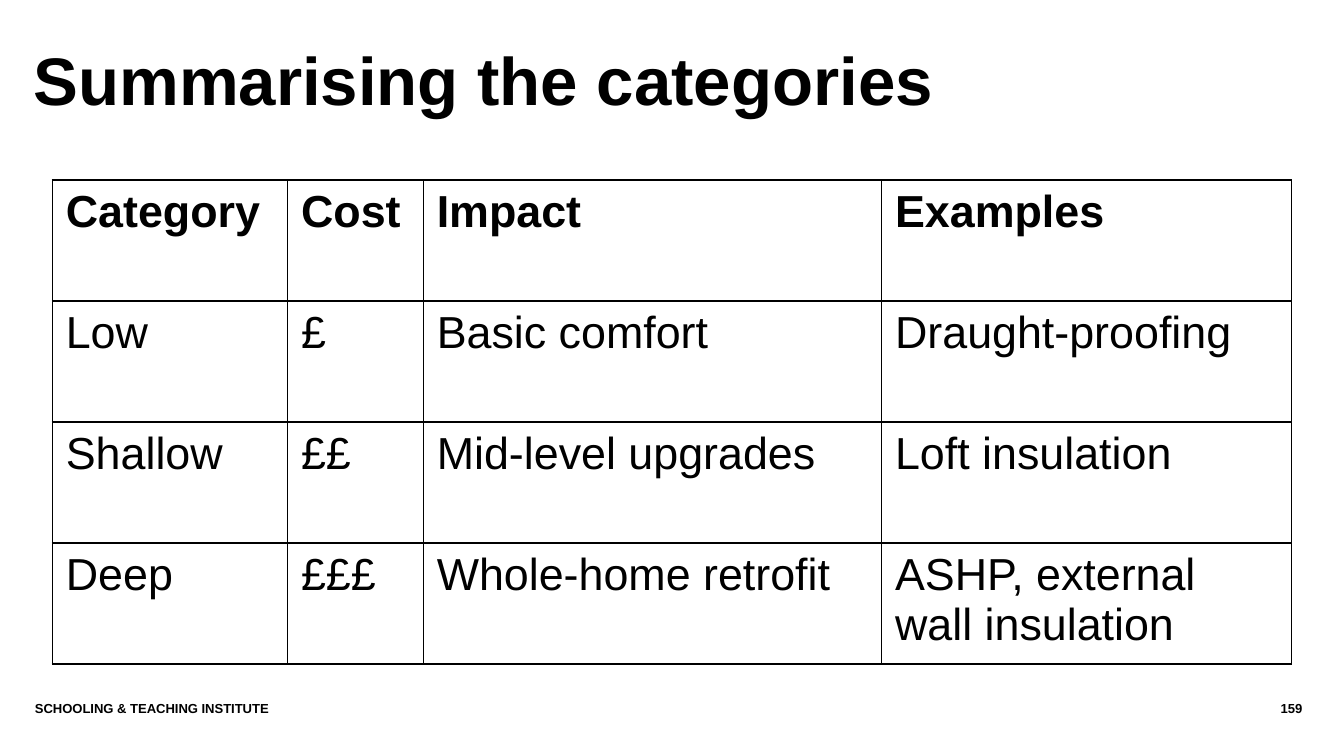
from lxml import etree
from pptx import Presentation
from pptx import util as u
from pptx.dml.color import RGBColor
from pptx.enum import text
from pptx.oxml.ns import qn

BLACK = RGBColor(0, 0, 0)
WHITE = RGBColor(255, 255, 255)
LEFT, RIGHT = text.PP_ALIGN.LEFT, text.PP_ALIGN.RIGHT


def write(frame, words, size, bold=True, align=LEFT, margin=0,
          anchor=text.MSO_ANCHOR.TOP, spacing=1.0):
    frame.word_wrap = True
    frame.vertical_anchor = anchor
    frame.margin_left = frame.margin_right = u.Inches(margin)
    frame.margin_top = frame.margin_bottom = u.Inches(margin / 2)
    line = frame.paragraphs[0]
    line.alignment = align
    line.line_spacing = spacing
    run = line.add_run()
    run.text = words
    run.font.name = "Arial"
    run.font.size = u.Pt(size)
    run.font.bold = bold
    run.font.color.rgb = BLACK


def outline(cell, width):
    props = cell._tc.get_or_add_tcPr()
    for position, side in enumerate(("lnL", "lnR", "lnT", "lnB")):
        border = etree.Element(qn(f"a:{side}"), w=str(width))
        fill = etree.SubElement(border, qn("a:solidFill"))
        etree.SubElement(fill, qn("a:srgbClr"), val=str(BLACK))
        props.insert(position, border)


deck = Presentation()
deck.slide_width = u.Inches(10)
deck.slide_height = deck.slide_width * 9 // 16
slide = deck.slides.add_slide(deck.slide_layouts[5])

heading = slide.shapes.title
heading.left, heading.top = u.Inches(0.25), u.Inches(0.27)
heading.width, heading.height = u.Inches(9.23), u.Inches(0.76)
write(heading.text_frame, "Summarising the categories", 36,
      anchor=text.MSO_ANCHOR.MIDDLE, spacing=0.75)

for words, left, width, align in (
    ("SCHOOLING & TEACHING INSTITUTE", 0.26, 8.41, LEFT),
    ("159", 8.7, 0.99, RIGHT),
):
    footer = slide.shapes.add_textbox(
        u.Inches(left), u.Inches(5.21), u.Inches(width), u.Inches(0.3))
    write(footer.text_frame, words, 7, align=align)

categories = (
    ("Category", "Cost", "Impact", "Examples"),
    ("Low", "£", "Basic comfort", "Draught-proofing"),
    ("Shallow", "££", "Mid-level upgrades", "Loft insulation"),
    ("Deep", "£££", "Whole-home retrofit", "ASHP, external wall insulation"),
)
column_widths = (1.75, 1.01, 3.41, 3.05)
row_height = 0.9

summary = slide.shapes.add_table(
    len(categories), len(column_widths), u.Inches(0.39), u.Inches(1.34),
    u.Inches(sum(column_widths)), u.Inches(row_height * len(categories))).table
for column, width in zip(summary.columns, column_widths):
    column.width = u.Inches(width)

for row, entries in enumerate(categories):
    summary.rows[row].height = u.Inches(row_height)
    for column, entry in enumerate(entries):
        cell = summary.cell(row, column)
        cell.fill.solid()
        cell.fill.fore_color.rgb = WHITE
        outline(cell, u.Pt(1))
        cell.margin_left = cell.margin_right = u.Inches(0.1)
        cell.margin_top = cell.margin_bottom = u.Inches(0.05)
        cell.vertical_anchor = text.MSO_ANCHOR.TOP
        write(cell.text_frame, entry, 24, bold=row == 0, margin=0.1)

deck.save("out.pptx")
